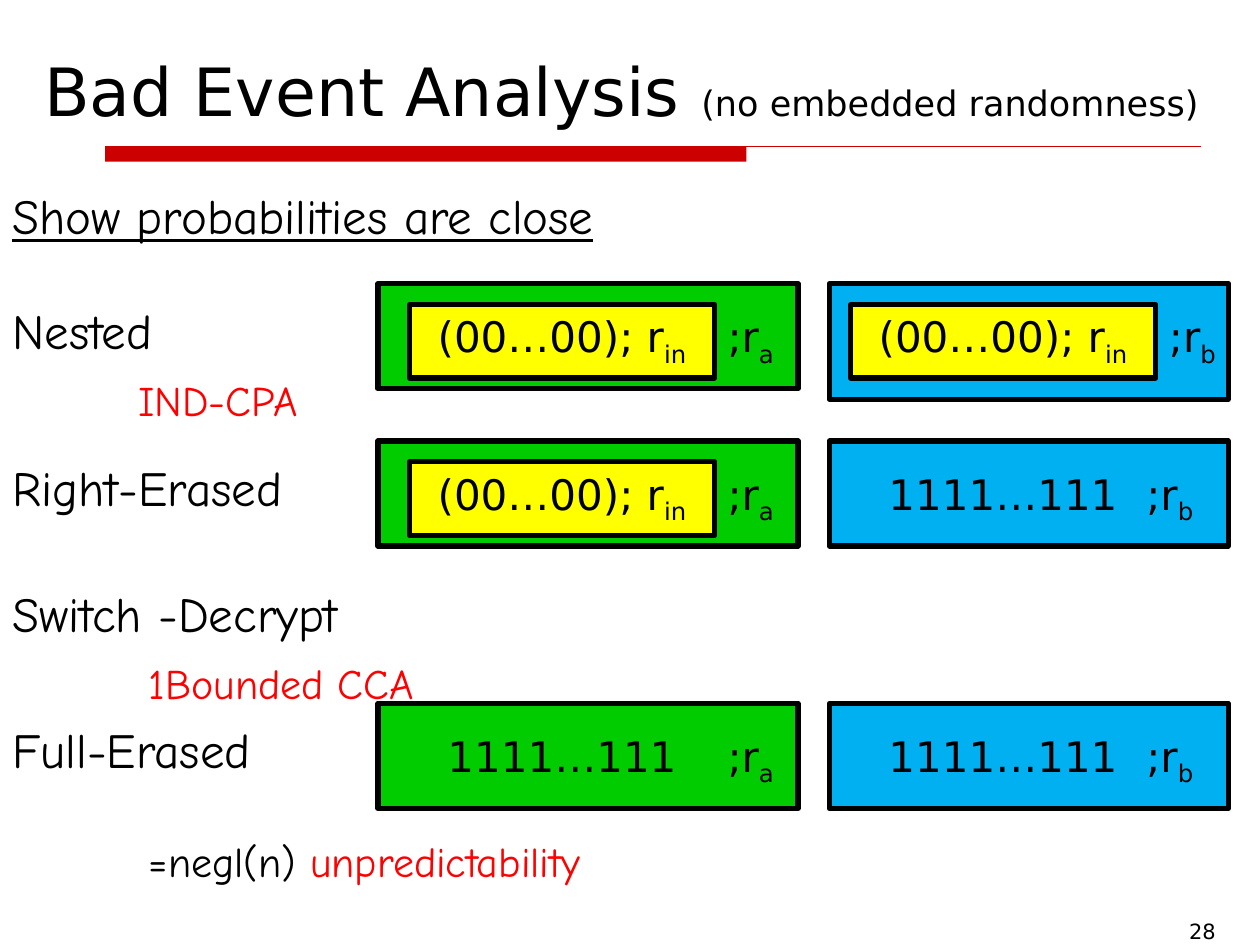
"""Build the slide on bad event analysis with its nested and erased ciphertexts."""
from pptx import Presentation
from pptx.dml.color import RGBColor
from pptx.enum.shapes import MSO_CONNECTOR, MSO_SHAPE
from pptx.enum.text import MSO_ANCHOR, PP_ALIGN
from pptx.oxml.ns import qn
from pptx.util import Cm, Pt

RECTANGLE, STRAIGHT = MSO_SHAPE.RECTANGLE, MSO_CONNECTOR.STRAIGHT
LEFT, CENTER, RIGHT = PP_ALIGN.LEFT, PP_ALIGN.CENTER, PP_ALIGN.RIGHT
TOP, BOTTOM = MSO_ANCHOR.TOP, MSO_ANCHOR.BOTTOM
SANS, HAND = "DejaVu Sans", "Comic Neue"
BLACK, RED, RULE_RED = "000000", "FF0000", "CC0000"
GREEN, BLUE, YELLOW = "00CC00", "00B0F0", "FFFF00"

TITLE = [("Bad Event Analysis ", {"size": 38}), ("(no embedded randomness)", {"size": 20})]
HEADINGS = [
    ("Show probabilities are close", 3.61, True),
    ("Nested", 5.93, False),
    ("Right-Erased", 9.1, False),
    ("Switch -Decrypt", 11.64, False),
    ("Full-Erased", 14.39, False),
]
REASONS = [
    (2.54, 7.42, 5.28, [("IND-CPA", RED)]),
    (2.75, 13.12, 7.2, [("1Bounded CCA", RED)]),
    (2.75, 16.72, 10.58, [("=negl(n) ", BLACK), ("unpredictability", RED)]),
]
SIDES = {
    "a": {"left": 7.62, "width": 8.47, "color": GREEN, "inner": 8.26, "tag": 13.97, "tag_width": 2.33},
    "b": {"left": 16.72, "width": 8.04, "color": BLUE, "inner": 17.15, "tag": 22.86, "tag_width": 1.9},
}
CIPHERTEXTS = [
    ("a", 5.72, 2.12, True, CENTER),
    ("b", 5.72, 2.33, True, RIGHT),
    ("a", 8.89, 2.12, True, CENTER),
    ("b", 8.89, 2.12, False, LEFT),
    ("a", 14.18, 2.12, False, CENTER),
    ("b", 14.18, 2.12, False, LEFT),
]


def rgb(value):
    return RGBColor.from_string(value)


def add_text(page, left, top, width, height, spans, align=LEFT, anchor=TOP):
    box = page.shapes.add_textbox(Cm(left), Cm(top), Cm(width), Cm(height))
    frame = box.text_frame
    frame.word_wrap = True
    frame.vertical_anchor = anchor
    para = frame.paragraphs[0]
    para.alignment = align
    for text, style in spans:
        span = para.add_run()
        span.text = text
        font = span.font
        font.name = style.get("font", SANS)
        font.size = Pt(style.get("size", 24))
        font.color.rgb = rgb(style.get("color", BLACK))
        if style.get("underline"):
            font.underline = True
        if style.get("subscript"):
            span._r.get_or_add_rPr().set("baseline", "-25000")


def add_box(page, left, top, width, height, color, outline=3):
    box = page.shapes.add_shape(RECTANGLE, Cm(left), Cm(top), Cm(width), Cm(height))
    box.shadow.inherit = False
    box.fill.solid()
    box.fill.fore_color.rgb = rgb(color)
    if outline:
        box.line.color.rgb = rgb(BLACK)
        box.line.width = Pt(outline)
    else:
        box.line.fill.background()


def add_rule(page, left, top, width, bar_width):
    add_box(page, left, top, bar_width, 0.3, RULE_RED, outline=0)
    rule = page.shapes.add_connector(STRAIGHT, Cm(left), Cm(top), Cm(left + width), Cm(top))
    rule.line.color.rgb = rgb(RULE_RED)
    rule.line.width = Pt(0.75)
    properties = rule._element.spPr
    properties.append(properties.makeelement(qn("a:effectLst"), {}))


def add_ciphertext(page, name, top, height, nested, tag_align):
    side = SIDES[name]
    text_top = top + 0.42
    add_box(page, side["left"], top, side["width"], height, side["color"])
    if nested:
        add_box(page, side["inner"], text_top, 6.15, 1.48, YELLOW)
        message = [("(00…00); r", {}), ("in", {"subscript": True})]
    else:
        message = [("1111…111", {})]
    add_text(page, side["inner"] - 0.21, text_top, 6.56, 1.27, message, CENTER)
    tag = [(";r", {}), (name, {"subscript": True})]
    add_text(page, side["tag"], text_top, side["tag_width"], 1.27, tag, tag_align)


def main():
    deck = Presentation()
    deck.slide_width, deck.slide_height = Cm(25.4), Cm(19.05)
    page = deck.slides.add_slide(deck.slide_layouts[6])
    add_rule(page, 2.12, 2.96, 22.1, 12.93)
    add_text(page, 0.64, 0.42, 23.92, 2.33, TITLE, anchor=BOTTOM)
    for ciphertext in CIPHERTEXTS:
        add_ciphertext(page, *ciphertext)
    for text, top, underline in HEADINGS:
        style = {"font": HAND, "size": 28, "underline": underline}
        add_text(page, 0, top, 17.99, 1.45, [(text, style)])
    for left, top, width, parts in REASONS:
        spans = [(text, {"font": HAND, "color": color}) for text, color in parts]
        add_text(page, left, top, width, 1.27, spans)
    add_text(page, 19.26, 18.39, 5.5, 0.66, [("28", {"size": 12})], RIGHT)
    deck.save("out.pptx")


if __name__ == "__main__":
    main()
